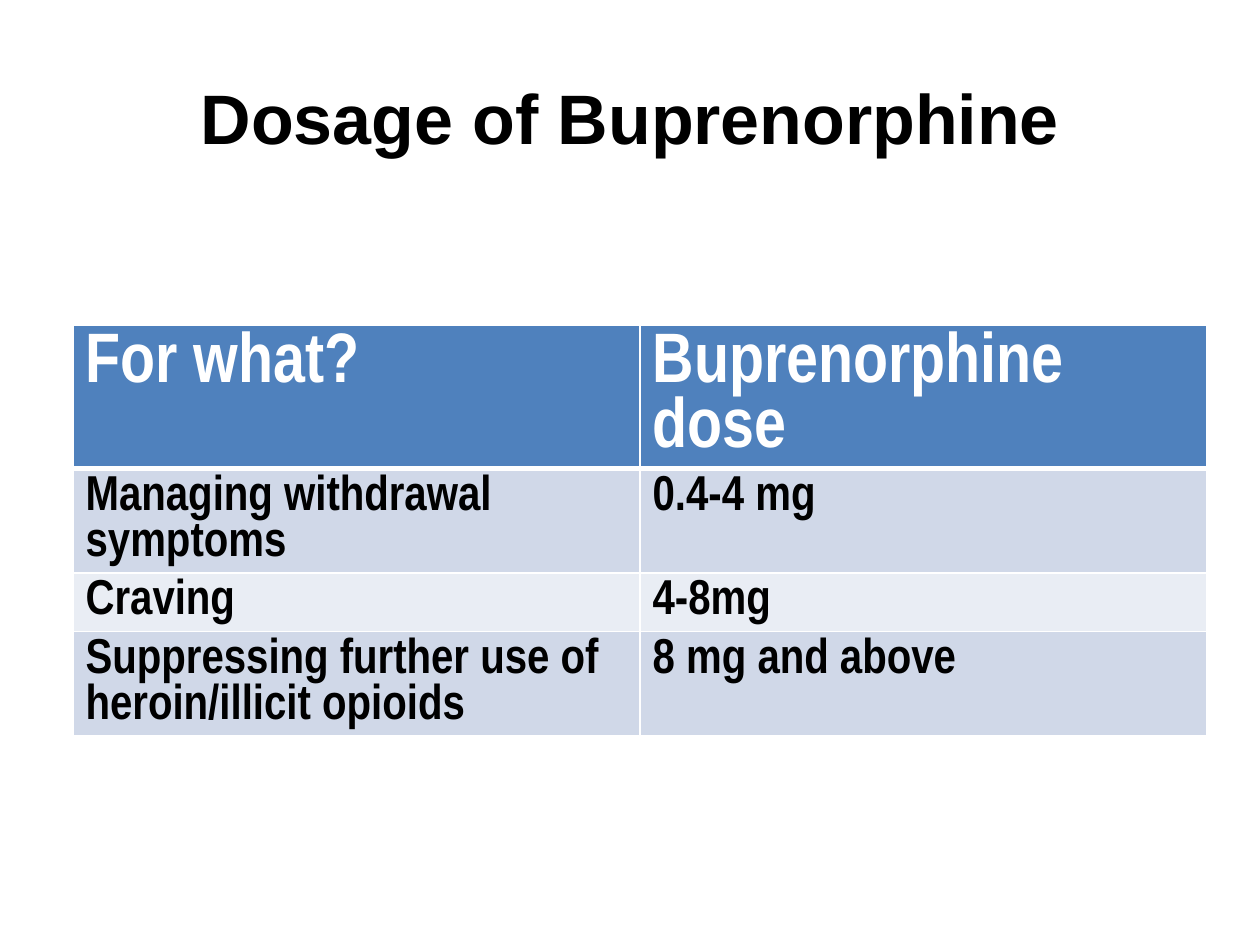
from lxml import etree
from pptx import Presentation
from pptx.dml.color import RGBColor
from pptx.enum.text import MSO_ANCHOR, PP_ALIGN
from pptx.oxml.ns import qn
from pptx.util import Inches, Pt

CENTER, LEFT = PP_ALIGN.CENTER, PP_ALIGN.LEFT
MIDDLE = MSO_ANCHOR.MIDDLE
HEADER, BANDS = "4F81BD", ("D0D8E8", "E9EDF4")
WHITE, BLACK = "FFFFFF", "000000"
ROW_HEIGHT = 0.41
DOSES = [
    ("For what?", "Buprenorphine dose"),
    ("Managing withdrawal symptoms", "0.4-4 mg"),
    ("Craving", "4-8mg"),
    ("Suppressing further use of heroin/illicit opioids", "8 mg and above"),
]


def rgb(value):
    """Return the colour for a hex string."""
    return RGBColor.from_string(value)


def add_run(tf, text, font, size, color, align=LEFT, spacing=None):
    """Write one bold run into the first paragraph of a text frame."""
    p = tf.paragraphs[0]
    p.alignment, p.line_spacing = align, spacing
    r = p.add_run()
    r.text = text
    r.font.name, r.font.size, r.font.bold = font, Pt(size), True
    r.font.color.rgb = rgb(color)


def set_borders(cell, top, bottom):
    """Give a cell white borders with the given top and bottom widths."""
    tc_pr = cell._tc.get_or_add_tcPr()
    sides = (("a:lnL", 1), ("a:lnR", 1), ("a:lnT", top), ("a:lnB", bottom))
    for k, (tag, width) in enumerate(sides):
        ln = etree.Element(qn(tag), w=str(Pt(width)))
        fill = etree.SubElement(ln, qn("a:solidFill"))
        etree.SubElement(fill, qn("a:srgbClr"), val=WHITE)
        tc_pr.insert(k, ln)


def add_title(s, box, text):
    """Place the centred slide title in its box."""
    tf = s.shapes.add_textbox(*map(Inches, box)).text_frame
    tf.word_wrap = True
    tf.vertical_anchor = MIDDLE
    add_run(tf, text, "Arial", 40, BLACK, CENTER)


def add_dose_table(s, box, rows):
    """Place the banded dose table with a header row in its box."""
    table = s.shapes.add_table(len(rows), len(rows[0]), *map(Inches, box)).table
    for i, row in enumerate(rows):
        fill = BANDS[(i - 1) % 2] if i else HEADER
        size, color, spacing = (28, BLACK, 26.2) if i else (40, WHITE, 37.4)
        for j, text in enumerate(row):
            cell = table.cell(i, j)
            cell.fill.solid()
            cell.fill.fore_color.rgb = rgb(fill)
            set_borders(cell, 3 if i == 1 else 1, 1 if i else 3)
            add_run(cell.text_frame, text, "Arial Narrow", size, color,
                    spacing=Pt(spacing))


def main():
    """Build and save the slide."""
    prs = Presentation()
    prs.slide_width, prs.slide_height = Inches(10), Inches(7.5)
    s = prs.slides.add_slide(prs.slide_layouts[6])
    add_title(s, (0.5, 0.3, 9, 1.25), "Dosage of Buprenorphine")
    add_dose_table(s, (0.58, 2.58, 9, ROW_HEIGHT * len(DOSES)), DOSES)
    prs.save("out.pptx")


if __name__ == "__main__":
    main()
